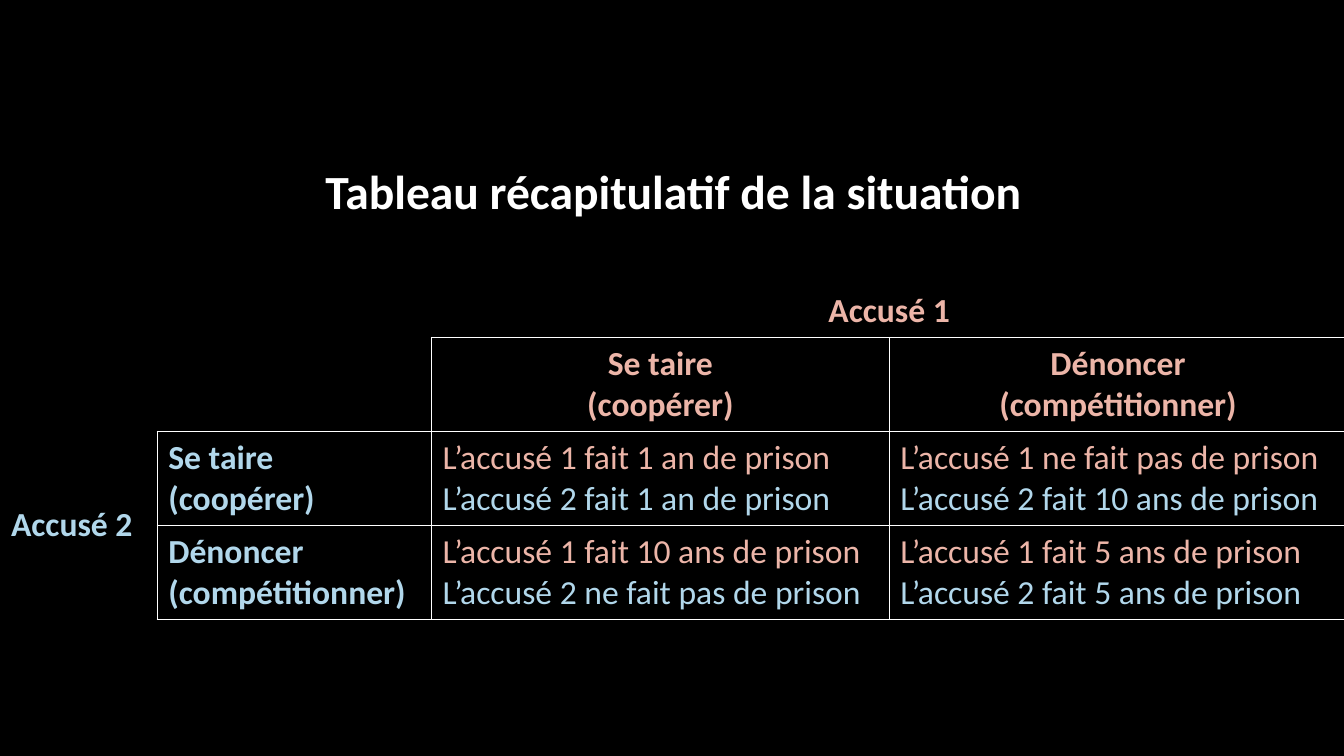
from pptx import Presentation
from pptx.dml.color import RGBColor
from pptx.enum.text import MSO_ANCHOR, PP_ALIGN
from pptx.oxml.ns import qn
from pptx.util import Inches, Pt
from lxml.etree import SubElement

BLACK = RGBColor(0x00, 0x00, 0x00)
WHITE = RGBColor(0xFF, 0xFF, 0xFF)
SALMON = RGBColor(0xEC, 0xB5, 0xA8)
SKY = RGBColor(0xB1, 0xD7, 0xEB)

COLUMNS = [1.56, 2.72, 4.54, 4.54]
ROWS = [1.25, 0.52, 0.93, 0.93, 0.93]
CHOICES = [["Se taire", "(coopérer)"], ["Dénoncer", "(compétitionner)"]]
OUTCOMES = [
    [["L’accusé 1 fait 1 an de prison", "L’accusé 2 fait 1 an de prison"],
     ["L’accusé 1 ne fait pas de prison", "L’accusé 2 fait 10 ans de prison"]],
    [["L’accusé 1 fait 10 ans de prison", "L’accusé 2 ne fait pas de prison"],
     ["L’accusé 1 fait 5 ans de prison", "L’accusé 2 fait 5 ans de prison"]],
]


def write(cell, lines, colors, size=24, bold=True, align=PP_ALIGN.LEFT,
          anchor=MSO_ANCHOR.MIDDLE):
    """Put one paragraph per line in the cell, each in its own colour."""
    cell.vertical_anchor = anchor
    tf = cell.text_frame
    for i, (line, color) in enumerate(zip(lines, colors)):
        p = tf.paragraphs[0] if i == 0 else tf.add_paragraph()
        p.alignment = align
        r = p.add_run()
        r.text = line
        r.font.name = "Calibri"
        r.font.size = Pt(size)
        r.font.bold = bold
        r.font.color.rgb = color


def framed(row, col):
    """Tell whether a cell belongs to the outlined part of the matrix."""
    return row >= 2 and col >= 1 and (row, col) != (2, 1)


class SlideBuilder:
    def __init__(self, prs, background, line_color, line_width):
        self.line_color = line_color
        self.line_width = line_width
        self.s = prs.slides.add_slide(prs.slide_layouts[6])
        fill = self.s.background.fill
        fill.solid()
        fill.fore_color.rgb = background

    def table(self, left, top, columns, rows):
        frame = self.s.shapes.add_table(
            len(rows), len(columns), Inches(left), Inches(top),
            Inches(sum(columns)), Inches(sum(rows)))
        table = frame.table
        table.first_row = table.horz_banding = False
        for col, width in zip(table.columns, columns):
            col.width = Inches(width)
        for row, height in zip(table.rows, rows):
            row.height = Inches(height)
        for r in range(len(rows)):
            for c in range(len(columns)):
                self.format_cell(table.cell(r, c), r, c)
        return table

    def format_cell(self, cell, row, col):
        cell.margin_left = cell.margin_right = Inches(0.11)
        cell.margin_top = cell.margin_bottom = Inches(0.06)
        neighbours = {"L": (row, col - 1), "R": (row, col + 1),
                      "T": (row - 1, col), "B": (row + 1, col)}
        for side, (r, c) in neighbours.items():
            inside = r < len(ROWS) and c < len(COLUMNS)
            self.border(cell, side, framed(row, col) or inside and framed(r, c))
        cell.fill.background()

    def border(self, cell, side, visible):
        ln = SubElement(cell._tc.get_or_add_tcPr(), qn(f"a:ln{side}"),
                        w=str(Pt(self.line_width)))
        if visible:
            fill = SubElement(ln, qn("a:solidFill"))
            SubElement(fill, qn("a:srgbClr"), val=str(self.line_color))
        else:
            SubElement(ln, qn("a:noFill"))


def main():
    prs = Presentation()
    prs.slide_width, prs.slide_height = Inches(13.33), Inches(7.5)
    builder = SlideBuilder(prs, BLACK, WHITE, 1)
    table = builder.table(0, 1.57, COLUMNS, ROWS)

    # Merged cells
    table.cell(0, 0).merge(table.cell(0, 3))
    table.cell(1, 2).merge(table.cell(1, 3))
    table.cell(3, 0).merge(table.cell(4, 0))

    # Title and players
    write(table.cell(0, 0), ["Tableau récapitulatif de la situation"], [WHITE],
          size=34, align=PP_ALIGN.CENTER, anchor=MSO_ANCHOR.TOP)
    write(table.cell(1, 2), ["Accusé 1"], [SALMON], align=PP_ALIGN.CENTER)
    write(table.cell(3, 0), ["Accusé 2"], [SKY])

    # Choices of each player and outcomes
    for i, choice in enumerate(CHOICES):
        write(table.cell(2, 2 + i), choice, [SALMON] * 2, align=PP_ALIGN.CENTER)
        write(table.cell(3 + i, 1), choice, [SKY] * 2)
        for j, outcome in enumerate(OUTCOMES[i]):
            write(table.cell(3 + i, 2 + j), outcome, [SALMON, SKY], bold=False)

    prs.save("out.pptx")


if __name__ == "__main__":
    main()
